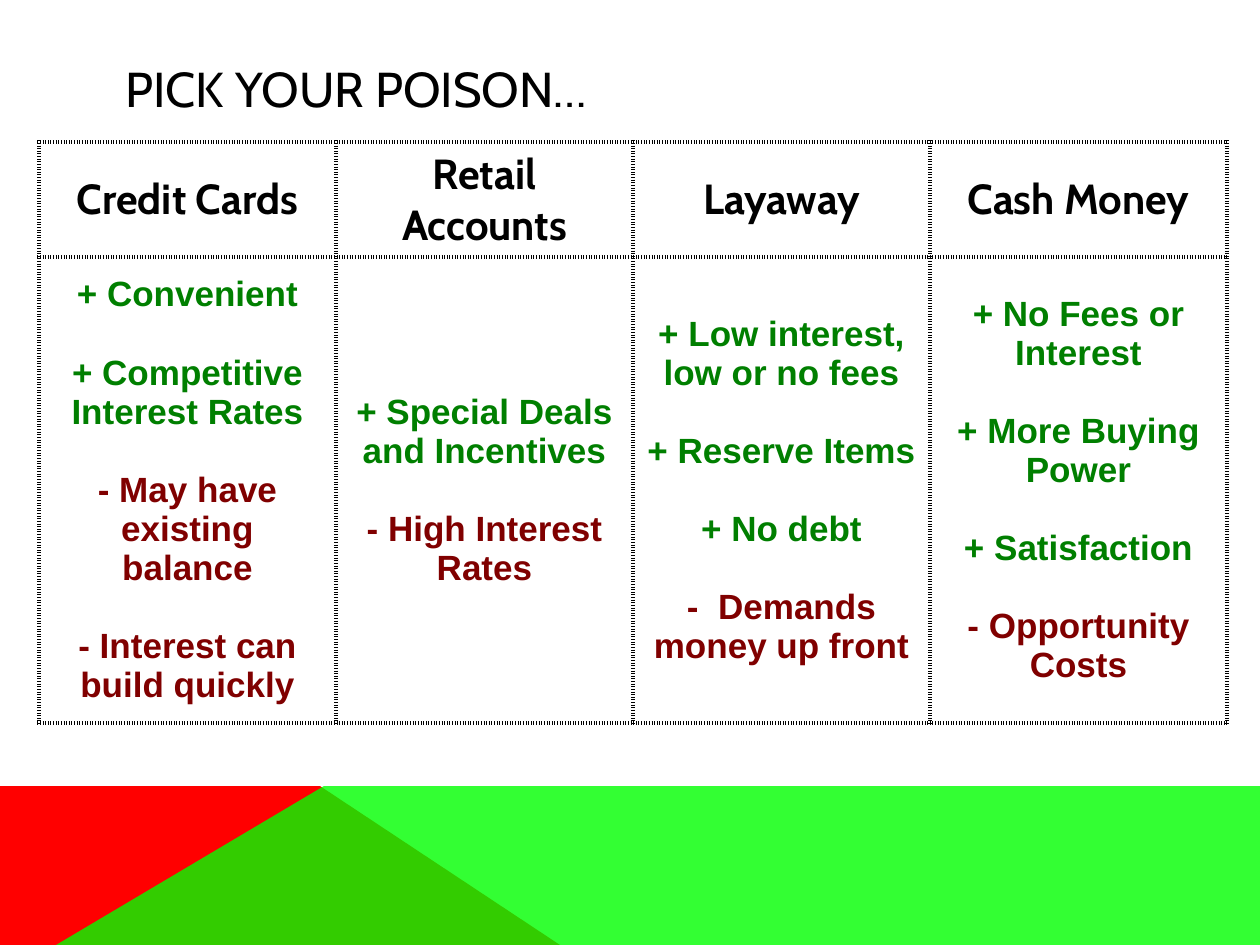
import pptx
import pptx.util
import pptx.dml.color
import pptx.enum.text
import pptx.oxml
import pptx.oxml.ns

PX = pptx.util.Inches(1) / 126
BLACK = pptx.dml.color.RGBColor(0x00, 0x00, 0x00)
RED = pptx.dml.color.RGBColor(0xFF, 0x00, 0x00)
LIME = pptx.dml.color.RGBColor(0x00, 0xFF, 0x00)
GREEN = pptx.dml.color.RGBColor(0x00, 0x7F, 0x00)
MAROON = pptx.dml.color.RGBColor(0x80, 0x00, 0x00)
MIDDLE = pptx.enum.text.MSO_ANCHOR.MIDDLE
CENTER = pptx.enum.text.PP_ALIGN.CENTER


def px(length):
    return pptx.util.Emu(round(length * PX))


def style(paragraph, font_name, size, color, bold=False):
    paragraph.font.name = font_name
    paragraph.font.size = pptx.util.Pt(size)
    paragraph.font.color.rgb = color
    paragraph.font.bold = bold


presentation = pptx.Presentation()
presentation.slide_width = px(1260)
presentation.slide_height = px(945)
slide = presentation.slides.add_slide(presentation.slide_layouts[6])

# Coloured bands along the bottom
bands = [
    (RED, 100, [(0, 945), (0, 786), (320, 786), (560, 945)]),
    (LIME, 80, [(56, 945), (324, 786), (1260, 786), (1260, 945)]),
]
for color, opacity, points in bands:
    builder = slide.shapes.build_freeform(*points[0], scale=PX)
    builder.add_line_segments(points[1:], close=True)
    band = builder.convert_to_shape()
    band.shadow.inherit = False
    band.line.fill.background()
    band.fill.solid()
    band.fill.fore_color.rgb = color
    if opacity < 100:
        color_element = band.element.spPr.find(".//" + pptx.oxml.ns.qn("a:srgbClr"))
        color_element.append(pptx.oxml.parse_xml(
            f'<a:alpha {pptx.oxml.ns.nsdecls("a")} val="{opacity * 1000}"/>'))

# Title
title = slide.shapes.add_textbox(px(113), px(50), px(1036), px(76))
title.text_frame.word_wrap = True
title.text_frame.vertical_anchor = MIDDLE
title.text_frame.text = "PICK YOUR POISON…"
style(title.text_frame.paragraphs[0], "Cabin", 28, BLACK)

# Payment options with their advantages and drawbacks
options = {
    "Credit Cards": ["+ Convenient", "+ Competitive", "Interest Rates",
                     "- May have existing balance", "- Interest can build quickly"],
    "Retail Accounts": ["+ Special Deals and Incentives", "- High Interest Rates"],
    "Layaway": ["+ Low interest, low or no fees", "+ Reserve Items", "+ No debt",
                "-  Demands money up front"],
    "Cash Money": ["+ No Fees or Interest", "+ More Buying Power", "+ Satisfaction",
                   "- Opportunity Costs"],
}
table = slide.shapes.add_table(2, 4, px(39), px(142), px(1188), px(577)).table
table.first_row = False
table.horz_banding = False
table.rows[0].height = px(115)
table.rows[1].height = px(462)

for column, (option, points) in enumerate(options.items()):
    table.columns[column].width = px(297)
    header, body = table.cell(0, column), table.cell(1, column)
    header.text = option
    style(header.text_frame.paragraphs[0], "Cabin", 24, BLACK, bold=True)

    body.text = "\n".join(points)
    for index, paragraph in enumerate(body.text_frame.paragraphs):
        color = MAROON if paragraph.text.startswith("-") else GREEN
        style(paragraph, "Arial", 20, color, bold=True)
        # Each new point is set off by one line; a continued point is not
        if index and paragraph.text[0] in "+-":
            paragraph.space_before = pptx.util.Pt(22.3)

# Dotted borders, no fill, centred text
for cell in table.iter_cells():
    cell.vertical_anchor = MIDDLE
    for paragraph in cell.text_frame.paragraphs:
        paragraph.alignment = CENTER
    properties = cell._tc.get_or_add_tcPr()
    for side in "LRTB":
        properties.append(pptx.oxml.parse_xml(
            f'<a:ln{side} {pptx.oxml.ns.nsdecls("a")} w="{pptx.util.Pt(2.25)}">'
            f'<a:solidFill><a:srgbClr val="{BLACK}"/></a:solidFill>'
            f'<a:prstDash val="dot"/></a:ln{side}>'))
    cell.fill.background()

presentation.save("out.pptx")
